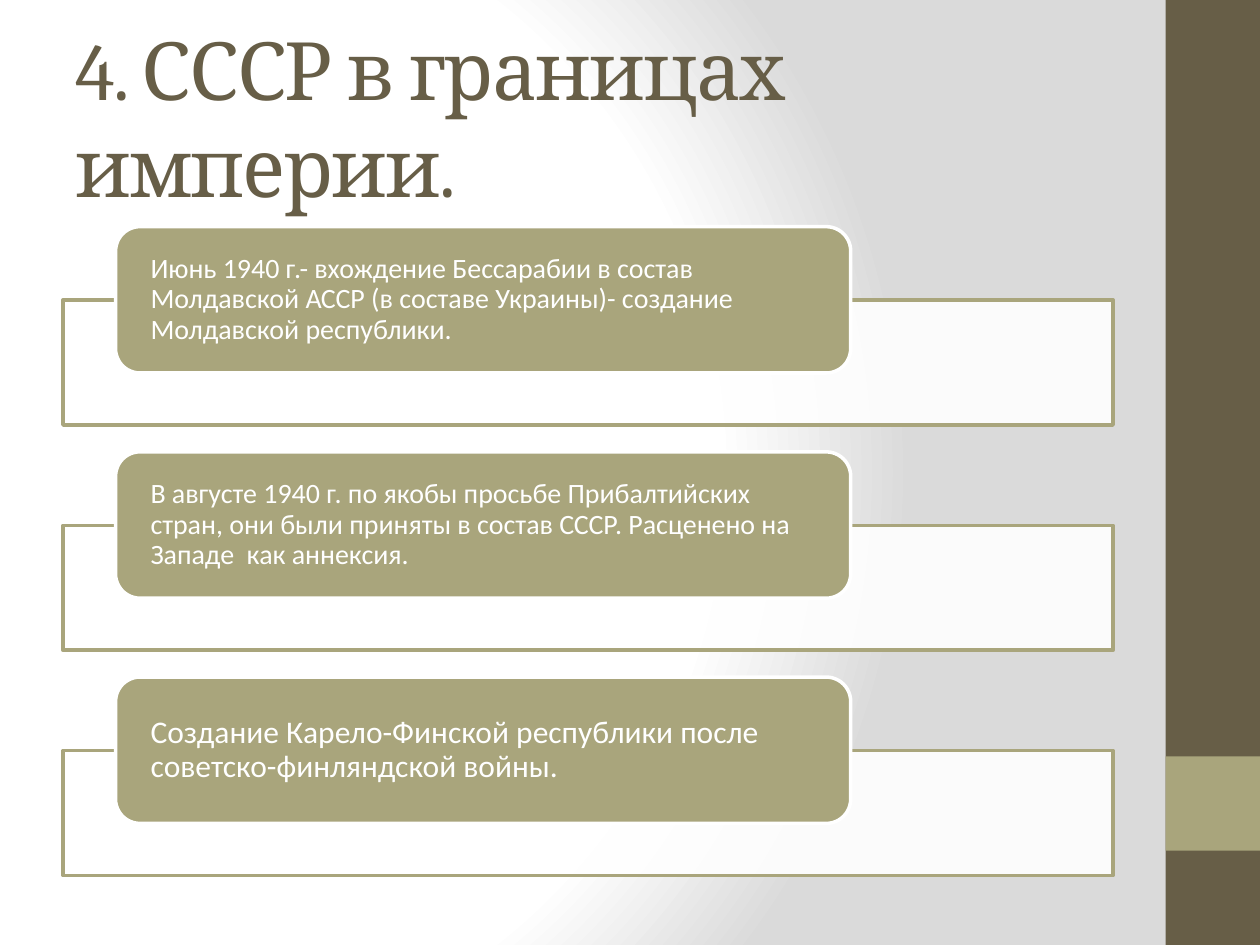
from pptx import Presentation
from pptx.dml.color import RGBColor
from pptx.enum.shapes import MSO_SHAPE
from pptx.enum.text import MSO_ANCHOR, MSO_AUTO_SIZE, PP_ALIGN
from pptx.oxml import parse_xml
from pptx.oxml.ns import nsdecls, qn
from pptx.util import Cm, Pt
from lxml.etree import SubElement

BROWN = RGBColor(0x67, 0x5E, 0x47)
OLIVE = RGBColor(0xA9, 0xA5, 0x7C)
WHITE = RGBColor(0xFF, 0xFF, 0xFF)

TITLE = "4. СССР в границах империи."
EVENTS = [
    ("Июнь 1940 г.- вхождение Бессарабии в состав Молдавской АССР "
     "(в составе Украины)- создание Молдавской республики.", 16),
    ("В августе 1940 г. по якобы просьбе Прибалтийских стран, они были "
     "приняты в состав СССР. Расценено на Западе  как аннексия.", 16),
    ("Создание Карело-Финской республики после "
     "советско-финляндской войны.", 18),
]


def paint_background(page):
    """White glow from the left that fades to grey."""
    page.background.fill.gradient()
    gradient = page.element.find(".//" + qn("a:gradFill"))
    gradient.getparent().replace(gradient, parse_xml(
        f'<a:gradFill {nsdecls("a")} rotWithShape="1"><a:gsLst>'
        '<a:gs pos="0"><a:srgbClr val="FFFFFF"/></a:gs>'
        '<a:gs pos="75000"><a:srgbClr val="FFFFFF"/></a:gs>'
        '<a:gs pos="100000"><a:srgbClr val="DADADA"/></a:gs></a:gsLst>'
        '<a:path path="circle"><a:fillToRect l="20000" t="50000" '
        'r="100000" b="50000"/></a:path></a:gradFill>'))


def add_box(page, kind, left, top, width, height, fill, line=None):
    box = page.shapes.add_shape(kind, left, top, width, height)
    box.shadow.inherit = False
    box.fill.solid()
    box.fill.fore_color.rgb = fill
    if line is None:
        box.line.fill.background()
    else:
        box.line.color.rgb = line
        box.line.width = Pt(2)
    return box


def add_side_band(page, left, top, width, height):
    add_box(page, MSO_SHAPE.RECTANGLE, left, top, width, height, BROWN)
    # Square accent, one band width above the bottom edge
    add_box(page, MSO_SHAPE.RECTANGLE, left, top + height - 2 * width,
            width, width, OLIVE)


def place_title(page, left, top, width, height):
    title = page.shapes.title
    title.left, title.top, title.width, title.height = left, top, width, height
    frame = title.text_frame
    frame.text = TITLE
    frame.word_wrap = True
    frame.auto_size = MSO_AUTO_SIZE.NONE
    frame.vertical_anchor = MSO_ANCHOR.MIDDLE
    para = frame.paragraphs[0]
    para.alignment = PP_ALIGN.LEFT
    para.font.name = "Cambria"
    para.font.size = Pt(46)
    para.font.color.rgb = BROWN
    # Slightly tightened letters
    title.element.find(".//" + qn("a:defRPr")).set("spc", "-100")


def add_event(page, left, top, width, text, size):
    # Translucent frame behind the label
    frame_box = add_box(page, MSO_SHAPE.RECTANGLE, left, top + Cm(1.48),
                        width, Cm(2.52), WHITE, OLIVE)
    color = frame_box.element.spPr.find(qn("a:solidFill")).find(qn("a:srgbClr"))
    SubElement(color, qn("a:alpha")).set("val", "90000")

    # Label with the event
    label = add_box(page, MSO_SHAPE.ROUNDED_RECTANGLE, left + Cm(1.06), top,
                    int(width * 0.7), Cm(2.95), OLIVE, WHITE)
    frame = label.text_frame
    frame.word_wrap = True
    frame.vertical_anchor = MSO_ANCHOR.MIDDLE
    frame.margin_left = frame.margin_right = Cm(0.56)
    frame.margin_top = frame.margin_bottom = 0
    frame.text = text
    para = frame.paragraphs[0]
    para.alignment = PP_ALIGN.LEFT
    para.line_spacing = 0.9
    para.font.name = "Calibri"
    para.font.size = Pt(size)
    para.font.color.rgb = WHITE


def add_event_list(page, left, top, width, pitch):
    for index, (text, size) in enumerate(EVENTS):
        add_event(page, left, top + index * pitch, width, text, size)


def main():
    deck = Presentation()
    deck.slide_width, deck.slide_height = Cm(25.4), Cm(19.05)
    page = deck.slides.add_slide(deck.slide_layouts[5])
    left, width = Cm(1.27), Cm(21.17)

    paint_background(page)
    add_side_band(page, Cm(23.5), 0, Cm(1.9), deck.slide_height)
    place_title(page, left, Cm(0.76), width, Cm(3.18))
    add_event_list(page, left, Cm(4.57), width, Cm(4.54))
    deck.save("out.pptx")


if __name__ == "__main__":
    main()
